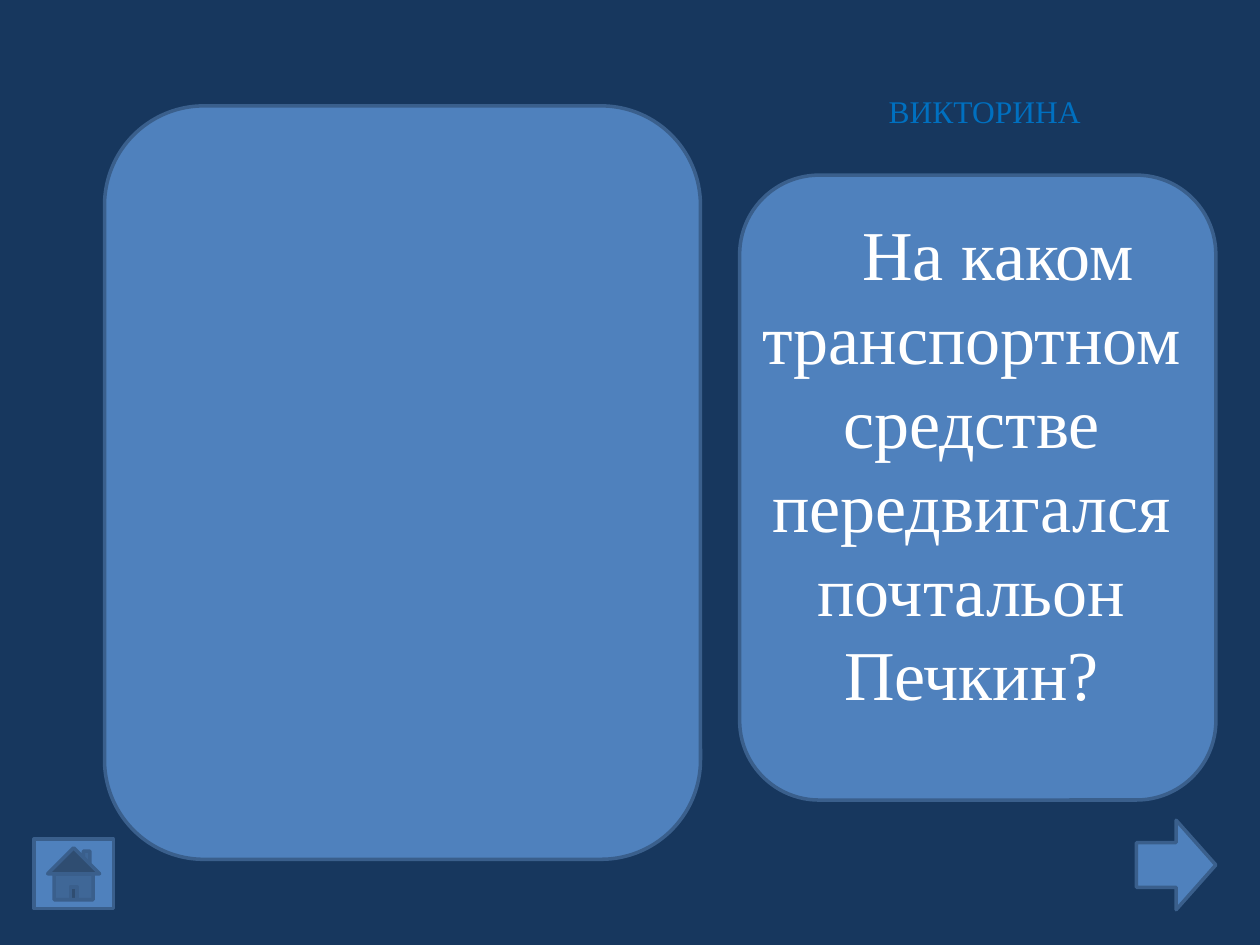
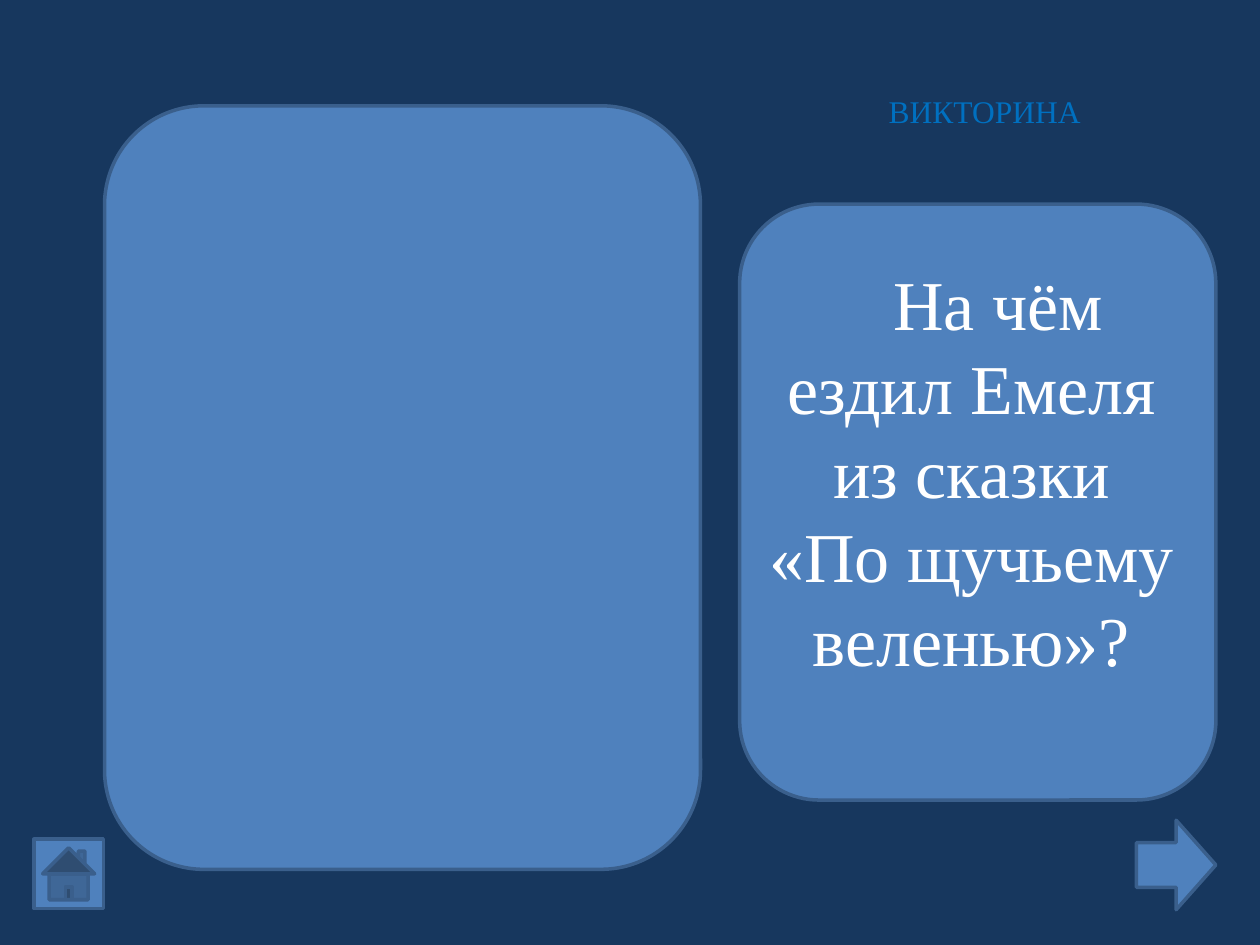
import dataclasses
import pptx
import pptx.dml.color
import pptx.enum.shapes
import pptx.enum.text
import pptx.util

Inches = pptx.util.Inches
Kind = pptx.enum.shapes.MSO_SHAPE
Fit = pptx.enum.text.MSO_AUTO_SIZE

NAVY, BLUE, EDGE = "17375E", "4F81BD", "3A5F8C"
WHITE, AZURE = "FFFFFF", "0070C0"
FONT = "Times New Roman"


@dataclasses.dataclass
class Box:
    left: float
    top: float
    width: float
    height: float

    def lengths(self) -> list:
        return [Inches(n) for n in dataclasses.astuple(self)]


@dataclasses.dataclass
class Quiz:
    lines: list[str]
    home: Box
    answer: Box
    card: Box
    words: Box


TITLE = Box(5.63, 0.68, 4.37, 0.4)
NEXT = Box(9.02, 6.51, 0.63, 0.71)

QUIZZES = [
    Quiz(["На каком транспортном средстве передвигался почтальон Печкин?"],
         home=Box(0.27, 6.66, 0.63, 0.55), answer=Box(0.83, 0.84, 4.73, 5.98),
         card=Box(5.87, 1.39, 3.78, 4.96), words=Box(5.94, 1.62, 3.54, 4.14)),
    Quiz(["На чём ездил Емеля из сказки", "«По щучьему веленью»?"],
         home=Box(0.27, 6.66, 0.55, 0.55), answer=Box(0.83, 0.84, 4.73, 6.06),
         card=Box(5.87, 1.62, 3.78, 4.73), words=Box(5.94, 2.02, 3.54, 3.47)),
]


def paint(color, code: str) -> None:
    color.rgb = pptx.dml.color.RGBColor.from_string(code)


def panel(slide, kind: Kind, box: Box) -> None:
    shape = slide.shapes.add_shape(kind, *box.lengths())
    shape.shadow.inherit = False
    shape.fill.solid()
    paint(shape.fill.fore_color, BLUE)
    paint(shape.line.color, EDGE)
    shape.line.width = pptx.util.Pt(2)


def write(shape, lines: list[str], size: int, code: str, indent: float = 0) -> None:
    """Fill a shape with centred lines, the first one indented."""
    frame = shape.text_frame
    frame.word_wrap = True
    frame.auto_size = Fit.NONE
    frame.vertical_anchor = pptx.enum.text.MSO_ANCHOR.TOP
    for i, line in enumerate(lines):
        para = frame.add_paragraph() if i else frame.paragraphs[0]
        para.alignment = pptx.enum.text.PP_ALIGN.CENTER
        if indent and not i:
            para._p.get_or_add_pPr().set("indent", str(Inches(indent)))
        run = para.add_run()
        run.text = line
        run.font.name = FONT
        run.font.size = pptx.util.Pt(size)
        paint(run.font.color, code)


def build(deck, quiz: Quiz) -> None:
    slide = deck.slides.add_slide(deck.slide_layouts.get_by_name("Title Only"))
    slide.background.fill.solid()
    paint(slide.background.fill.fore_color, NAVY)
    title = slide.shapes.title
    title.left, title.top, title.width, title.height = TITLE.lengths()
    write(title, ["ВИКТОРИНА"], 18, AZURE)
    panel(slide, Kind.ACTION_BUTTON_HOME, quiz.home)
    panel(slide, Kind.ROUNDED_RECTANGLE, quiz.answer)
    panel(slide, Kind.ROUNDED_RECTANGLE, quiz.card)
    words = slide.shapes.add_textbox(*quiz.words.lengths())
    write(words, quiz.lines, 40, WHITE, indent=0.42)
    panel(slide, Kind.RIGHT_ARROW, NEXT)


def main() -> None:
    deck = pptx.Presentation()
    deck.slide_width, deck.slide_height = Inches(10), Inches(7.5)
    for quiz in QUIZZES:
        build(deck, quiz)
    deck.save("out.pptx")


if __name__ == "__main__":
    main()
